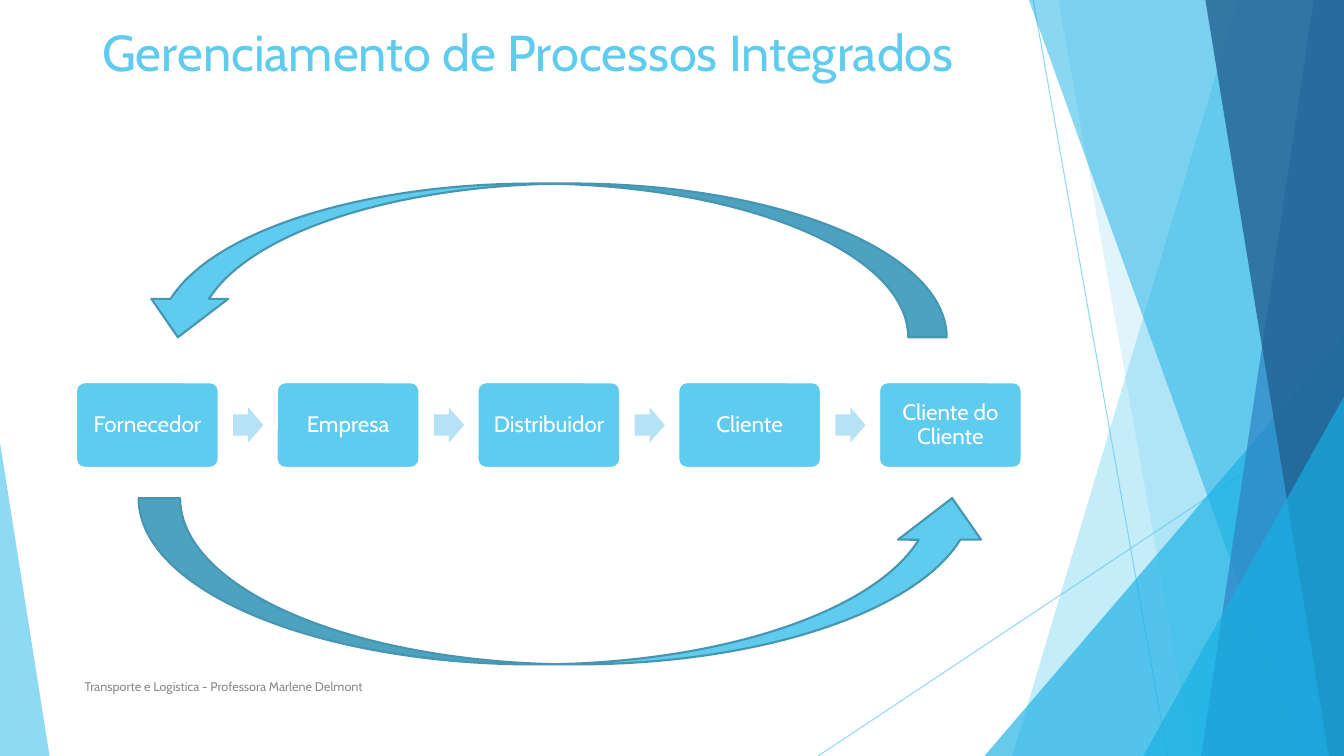
import pptx
import pptx.util
import pptx.dml.color
import pptx.enum.shapes
import pptx.enum.text
import pptx.oxml
import pptx.oxml.ns

Pt = pptx.util.Pt
RGB = pptx.dml.color.RGBColor
SHAPE = pptx.enum.shapes.MSO_SHAPE
ALIGN = pptx.enum.text.PP_ALIGN
ANCHOR = pptx.enum.text.MSO_ANCHOR

SKY = RGB(0x5F, 0xCB, 0xEF)
CYAN = RGB(0x17, 0xB0, 0xE4)
BLUE = RGB(0x2E, 0x83, 0xC3)
NAVY = RGB(0x22, 0x62, 0x92)
PALE = RGB(0xB6, 0xE2, 0xF6)
TEAL = RGB(0x46, 0x96, 0xB1)
GRAY = RGB(0x8C, 0x8C, 0x8C)
WHITE = RGB(0xFF, 0xFF, 0xFF)

# The slide is a grid of 160 columns by 90 rows of square cells.
COLUMNS, ROWS = 160, 90
CELL = pptx.util.Inches(7.5) // ROWS

STAGES = ["Fornecedor", "Empresa", "Distribuidor", "Cliente", "Cliente do Cliente"]
STAGE_LEFT, STAGE_PITCH = 9.05, 23.9
STAGE_TOP, STAGE_WIDTH, STAGE_HEIGHT = 45.5, 17, 10.2


def cells(*counts):
    return [round(count * CELL) for count in counts]


def apply(target, formats):
    for name, value in formats.items():
        setattr(target, name, value)


def set_opacity(colored, percent):
    """Make the solid colour of a fill or line partly transparent."""
    for color in colored.iter(pptx.oxml.ns.qn("a:srgbClr")):
        alpha = color.makeelement(pptx.oxml.ns.qn("a:alpha"), {"val": str(percent * 1000)})
        color.append(alpha)


def paint(shape, fill, outline=None, opacity=None):
    shape.shadow.inherit = False
    shape.fill.solid()
    shape.fill.fore_color.rgb = fill
    if opacity:
        set_opacity(shape.fill._xPr, opacity)
    if outline:
        shape.line.color.rgb = outline
        shape.line.width = Pt(1.5)
    else:
        shape.line.fill.background()


def add_preset(slide, kind, box, fill, adjustments=(), **look):
    shape = slide.shapes.add_shape(kind, *cells(*box))
    for index, value in enumerate(adjustments):
        shape.adjustments[index] = value
    paint(shape, fill, **look)
    return shape


def add_ray(slide, start, end):
    """Draw a thin translucent line of the backdrop."""
    ray = slide.shapes.add_connector(
        pptx.enum.shapes.MSO_CONNECTOR.STRAIGHT, *cells(*start, *end))
    apply(ray.line, {"width": Pt(0.75)})
    ray.line.color.rgb = SKY
    properties = ray._element.spPr
    set_opacity(properties, 70)
    properties.append(properties.makeelement(pptx.oxml.ns.qn("a:effectLst"), {}))


def add_band(slide, top_left, bottom_left, fill, opacity):
    """Fill from a slanted left edge to the right side of the slide."""
    outline = slide.shapes.build_freeform(*cells(top_left, 0), scale=1.0)
    corners = [(COLUMNS, 0), (COLUMNS, ROWS), (bottom_left, ROWS)]
    outline.add_line_segments([cells(*corner) for corner in corners], close=True)
    paint(outline.convert_to_shape(), fill, opacity=opacity)


def add_corner(slide, left, top, width, apex, fill, opacity):
    """Draw a right triangle that stands on the bottom edge."""
    add_preset(slide, SHAPE.ISOSCELES_TRIANGLE, (left, top, width, ROWS - top),
               fill, [apex], opacity=opacity)


def write(shape, text, size, color, frame_formats=None, paragraph_formats=None):
    frame = shape.text_frame
    apply(frame, {"word_wrap": True, **(frame_formats or {})})
    paragraph = frame.paragraphs[0]
    apply(paragraph, paragraph_formats or {})
    run = paragraph.add_run()
    run.text = text
    apply(run.font, {"name": "Cabin", "size": Pt(size)})
    run.font.color.rgb = color


def add_label(slide, box, text, size, color, anchor):
    label = slide.shapes.add_textbox(*cells(*box))
    write(label, text, size, color, {"vertical_anchor": anchor}, {"alignment": ALIGN.LEFT})


def add_backdrop(slide):
    add_ray(slide, (123, 0), (139, ROWS))
    add_ray(slide, (COLUMNS, 48.4), (97.4, ROWS))
    add_band(slide, 147.4, 120.5, SKY, 36)
    add_band(slide, 126, 142, SKY, 20)
    add_corner(slide, 117.2, 40, 42.8, 1, CYAN, 66)
    add_band(slide, 122.5, 154.9, CYAN, 50)
    add_band(slide, 156.4, 143, BLUE, 70)
    add_band(slide, 143.5, 158.2, NAVY, 80)
    add_corner(slide, 136.1, 47.2, 23.9, 1, CYAN, 66)
    add_corner(slide, 0, 52.7, 5.9, 0, SKY, 70)


def add_process(slide):
    inset = pptx.util.Inches(0.09)
    margins = {f"margin_{side}": inset for side in ("left", "right", "top", "bottom")}
    for index, name in enumerate(STAGES):
        left = STAGE_LEFT + index * STAGE_PITCH
        if index:
            add_preset(slide, SHAPE.RIGHT_ARROW, (left - 5.2, 48.5, 3.6, 4.2),
                       PALE, [0.6, 0.5])
        stage = add_preset(slide, SHAPE.ROUNDED_RECTANGLE,
                           (left, STAGE_TOP, STAGE_WIDTH, STAGE_HEIGHT),
                           SKY, [0.1], outline=WHITE)
        write(stage, name, 16, WHITE, {"vertical_anchor": ANCHOR.MIDDLE, **margins},
              {"alignment": ALIGN.CENTER, "line_spacing": 0.9})


def add_cycle(slide):
    for box, rotation in [((16.5, 59.3, 101.8, 19.8), 0), ((16.6, 21.85, 96.1, 18.3), 180)]:
        sweep = add_preset(slide, SHAPE.CURVED_UP_ARROW, box, SKY, outline=TEAL)
        sweep.rotation = rotation


def main():
    deck = pptx.Presentation()
    apply(deck, {"slide_width": COLUMNS * CELL, "slide_height": ROWS * CELL})
    slide = deck.slides.add_slide(deck.slide_layouts[6])
    add_backdrop(slide)
    add_label(slide, (11, 1.9, 112.8, 17.3), "Gerenciamento de Processos Integrados",
              36, SKY, ANCHOR.TOP)
    add_process(slide)
    add_label(slide, (8.9, 79.3, 82.7, 4.8),
              "Transporte e Logística - Professora Marlene Delmont", 9, GRAY, ANCHOR.MIDDLE)
    add_cycle(slide)
    deck.save("out.pptx")


if __name__ == "__main__":
    main()
